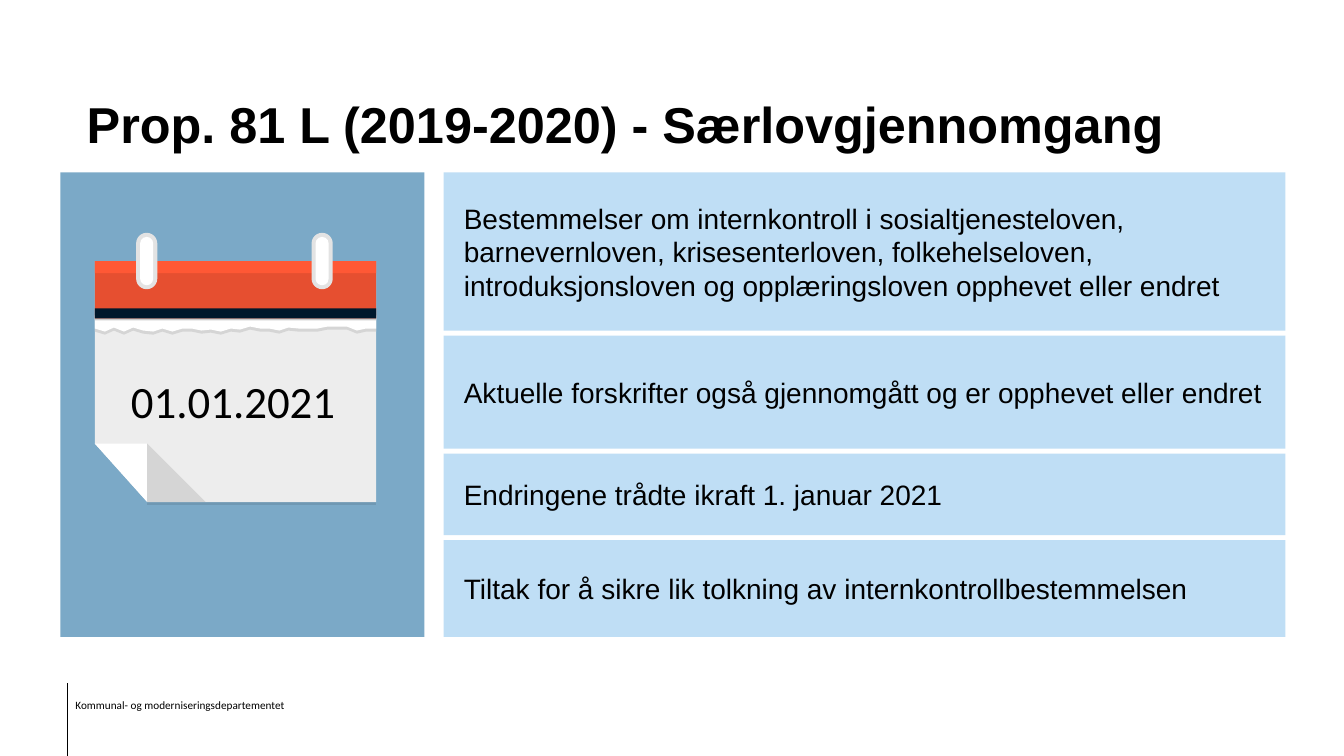
from typing import NamedTuple

from lxml import etree
from pptx import Presentation
from pptx.dml.color import RGBColor
from pptx.enum.shapes import MSO_CONNECTOR, MSO_SHAPE
from pptx.enum.text import MSO_ANCHOR, MSO_AUTO_SIZE, PP_ALIGN
from pptx.oxml.ns import qn
from pptx.util import Pt

RECTANGLE, ROUNDED = MSO_SHAPE.RECTANGLE, MSO_SHAPE.ROUNDED_RECTANGLE
STRAIGHT = MSO_CONNECTOR.STRAIGHT
MIDDLE, BOTTOM = MSO_ANCHOR.MIDDLE, MSO_ANCHOR.BOTTOM
NO_FIT, GROW = MSO_AUTO_SIZE.NONE, MSO_AUTO_SIZE.SHAPE_TO_FIT_TEXT
LEFT = PP_ALIGN.LEFT

EMU_PER_PX = 9144  # 100 px to the inch
BLACK, WHITE = "000000", "FFFFFF"
PANEL_BLUE, CARD_BLUE = "7BA9C7", "BFDEF5"
PAPER, PAPER_SHADE, RING_GREY = "EDEDED", "D5D5D5", "E3E3E3"

CONTENT_TOP = 171
CARD_LEFT, CARD_WIDTH, CARD_GAP = 440, 835, 5
PAGE_LEFT, PAGE_RIGHT, PAGE_TOP, PAGE_BOTTOM = 94, 373, 259, 498
PAGE_WIDTH = PAGE_RIGHT - PAGE_LEFT
FOLD_TOP, FOLD_X = 440, 146
TEAR_TOP, TEAR_THICKNESS = 313, 3
TEAR_HEIGHTS = (326, 329, 325, 329, 325, 328, 329, 326, 329, 326,
                326, 328, 327, 329, 326, 327, 324, 326, 326, 328,
                325, 326, 326, 326, 324, 324, 324, 328, 326, 326)
RING_LEFTS, RING_TOP, RING_WIDTH, RING_HEIGHT, RING_RIM = (135, 309), 231, 21, 56, 4


class Box(NamedTuple):
    left: int
    top: int
    width: int
    height: int


class Card(NamedTuple):
    height: int
    text: str


class Band(NamedTuple):
    top: int
    height: int
    colour: str


CARDS = (
    Card(157, "Bestemmelser om internkontroll i sosialtjenesteloven, "
              "barnevernloven, krisesenterloven, folkehelseloven, "
              "introduksjonsloven og opplæringsloven opphevet eller endret"),
    Card(112, "Aktuelle forskrifter også gjennomgått og er opphevet eller endret"),
    Card(81, "Endringene trådte ikraft 1. januar 2021"),
    Card(96, "Tiltak for å sikre lik tolkning av internkontrollbestemmelsen"),
)

CALENDAR_BANDS = (
    Band(313, 5, "CCCCCC"),
    Band(PAGE_TOP, 57, "E64F30"),
    Band(306, 10, "00182C"),
    Band(PAGE_TOP, 12, "FF5835"),
)


def px(length: int) -> int:
    return length * EMU_PER_PX


def rgb(colour: str) -> RGBColor:
    return RGBColor.from_string(colour)


def paint(shape, colour: str) -> None:
    shape.shadow.inherit = False
    shape.fill.solid()
    shape.fill.fore_color.rgb = rgb(colour)
    shape.line.fill.background()


def add_block(slide, box: Box, colour: str, kind=RECTANGLE):
    block = slide.shapes.add_shape(kind, *map(px, box))
    paint(block, colour)
    return block


def add_outline(slide, points: list[tuple[int, int]], colour: str) -> None:
    builder = slide.shapes.build_freeform(*points[0], scale=EMU_PER_PX)
    builder.add_line_segments(points[1:], close=True)
    paint(builder.convert_to_shape(), colour)


def write(shape, text: str, size: int, font: str, bold: bool = False):
    paragraph = shape.text_frame.paragraphs[0]
    paragraph.text = text
    paragraph.alignment = LEFT
    paragraph.font.name = font
    paragraph.font.size = Pt(size)
    paragraph.font.bold = bold
    paragraph.font.color.rgb = rgb(BLACK)
    return paragraph


def add_label(slide, box: Box, text: str, size: int, wrap: bool):
    label = slide.shapes.add_textbox(*map(px, box))
    label.text_frame.word_wrap = wrap
    label.text_frame.auto_size = GROW
    return write(label, text, size, "Calibri")


def add_title(slide, text: str) -> None:
    title = slide.shapes.title
    title.left, title.top, title.width, title.height = map(px, Box(76, 32, 1188, 125))
    title.text_frame.vertical_anchor = BOTTOM
    title.text_frame.auto_size = NO_FIT
    write(title, text, 36, "Arial", bold=True)


def add_footer(slide) -> None:
    department = add_label(slide, Box(65, 689, 283, 22),
                           "Kommunal- og moderniseringsdepartementet", 8, wrap=True)
    department.line_spacing = 0.9
    rule = slide.shapes.add_connector(STRAIGHT, px(67), px(678), px(67), px(750))
    rule.line.color.rgb = rgb(BLACK)
    rule.line.width = Pt(0.75)
    properties = rule.element.find(qn("p:spPr"))
    etree.SubElement(properties, qn("a:effectLst"))


def add_cards(slide) -> None:
    top = CONTENT_TOP
    for card in CARDS:
        block = add_block(slide, Box(CARD_LEFT, top, CARD_WIDTH, card.height), CARD_BLUE)
        frame = block.text_frame
        frame.word_wrap = True
        frame.vertical_anchor = MIDDLE
        frame.margin_left = px(20)
        write(block, card.text, 20, "Arial")
        top += card.height + CARD_GAP


def add_torn_edge(slide, drop: int, colour: str) -> None:
    """Draw the paper remnant, its ragged edge lowered by drop."""
    steps = len(TEAR_HEIGHTS) - 1
    ragged = [(PAGE_LEFT + round(PAGE_WIDTH * step / steps), height + drop)
              for step, height in enumerate(TEAR_HEIGHTS)]
    add_outline(slide, [(PAGE_LEFT, TEAR_TOP), *ragged, (PAGE_RIGHT, TEAR_TOP)], colour)


def add_calendar(slide) -> None:
    add_block(slide, Box(60, CONTENT_TOP, 361, 461), PANEL_BLUE)
    add_block(slide, Box(FOLD_X, PAGE_BOTTOM, PAGE_RIGHT - FOLD_X, 3), "6F98B3")
    fold_start, fold_tip = (PAGE_LEFT, FOLD_TOP), (FOLD_X, PAGE_BOTTOM)
    add_outline(slide, [(PAGE_LEFT, PAGE_TOP), fold_start, fold_tip,
                        (PAGE_RIGHT, PAGE_BOTTOM), (PAGE_RIGHT, PAGE_TOP)], PAPER)
    add_torn_edge(slide, TEAR_THICKNESS, PAPER_SHADE)
    add_torn_edge(slide, 0, WHITE)
    for band in CALENDAR_BANDS:
        add_block(slide, Box(PAGE_LEFT, band.top, PAGE_WIDTH, band.height), band.colour)
    fold_corner = (FOLD_X, FOLD_TOP)
    add_outline(slide, [fold_start, fold_tip, fold_corner], WHITE)
    add_outline(slide, [fold_corner, fold_tip, (204, PAGE_BOTTOM)], PAPER_SHADE)
    for left in RING_LEFTS:
        for inset, colour in ((0, RING_GREY), (RING_RIM, WHITE)):
            box = Box(left + inset, RING_TOP + inset,
                      RING_WIDTH - 2 * inset, RING_HEIGHT - 2 * inset)
            add_block(slide, box, colour, ROUNDED).adjustments[0] = 0.5
    add_label(slide, Box(120, 366, 225, 64), "01.01.2021", 32, wrap=False)


def main() -> None:
    presentation = Presentation()
    presentation.slide_width, presentation.slide_height = px(1333), px(750)
    slide = presentation.slides.add_slide(presentation.slide_layouts.get_by_name("Title Only"))
    add_footer(slide)
    add_title(slide, "Prop. 81 L (2019-2020) - Særlovgjennomgang")
    add_cards(slide)
    add_calendar(slide)
    presentation.save("out.pptx")


if __name__ == "__main__":
    main()
